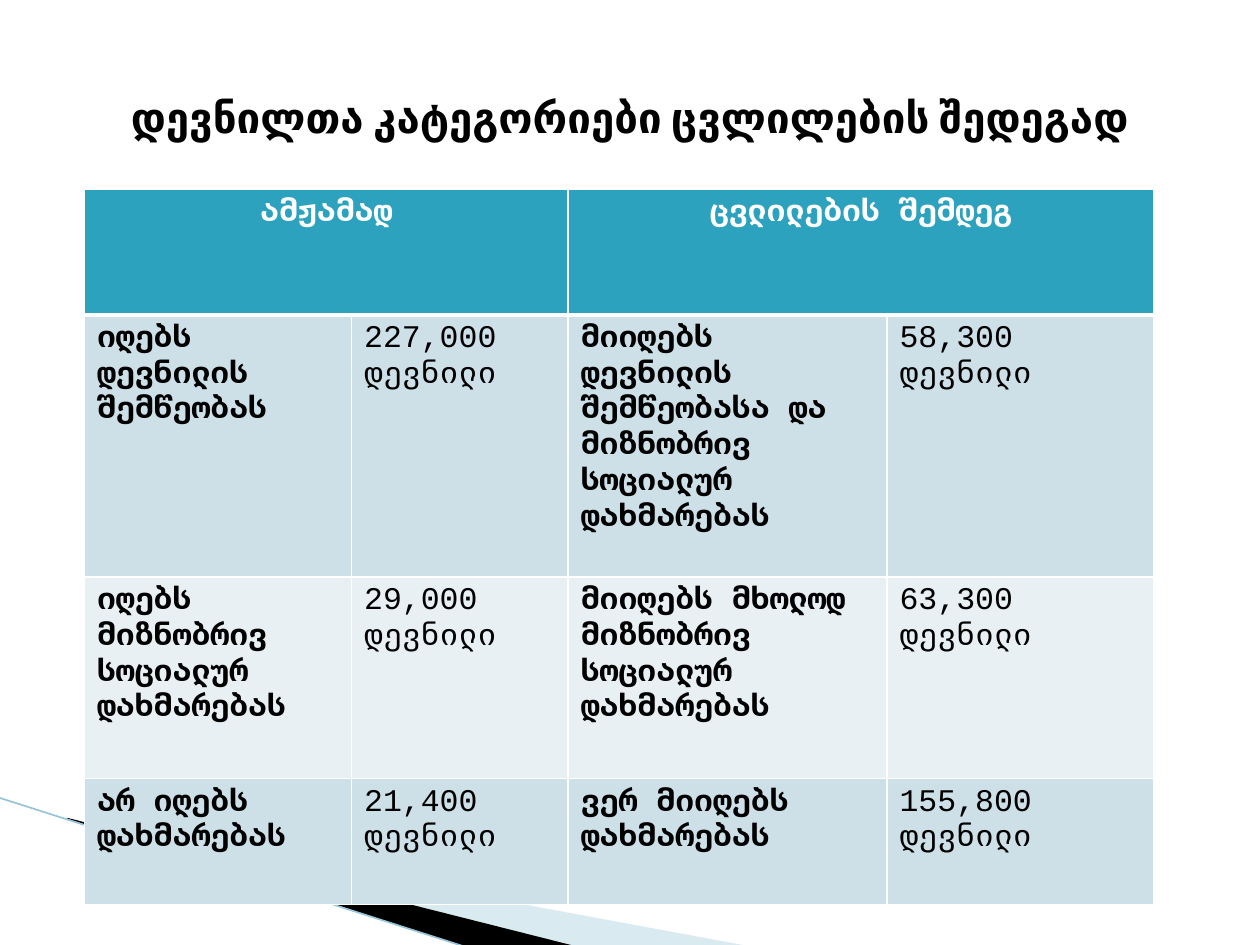
from dataclasses import dataclass

from lxml import etree
from pptx import Presentation
from pptx.dml.color import RGBColor
from pptx.enum.shapes import MSO_CONNECTOR
from pptx.enum.text import MSO_ANCHOR, PP_ALIGN
from pptx.oxml.ns import qn
from pptx.util import Inches, Pt

CENTER, LEFT = PP_ALIGN.CENTER, PP_ALIGN.LEFT
MIDDLE = MSO_ANCHOR.MIDDLE
STRAIGHT = MSO_CONNECTOR.STRAIGHT


@dataclass(frozen=True)
class Theme:
    title_font: str = "Calibri"
    table_font: str = "Courier New"
    title_size: int = 24
    table_size: int = 18
    ink: str = "000000"
    white: str = "FFFFFF"
    header: str = "2DA2BF"
    bands: tuple = ("CDE0E8", "E8F0F4")
    pale_wedge: str = "A0CBDC"
    edge: str = "97C5D8"


THEME = Theme()

COLUMN_WIDTHS = (2.12, 1.72, 2.53, 2.12)
ROW_HEIGHTS = (1, 2.08, 1.6, 1)
HEADERS = ("ამჟამად", "ცვლილების შემდეგ")
UNIT = "დევნილი"
CATEGORIES = (
    ("იღებს დევნილის შემწეობას", "227,000",
     "მიიღებს დევნილის შემწეობასა და მიზნობრივ სოციალურ დახმარებას", "58,300"),
    ("იღებს მიზნობრივ სოციალურ დახმარებას", "29,000",
     "მიიღებს მხოლოდ მიზნობრივ სოციალურ დახმარებას", "63,300"),
    ("არ იღებს დახმარებას", "21,400",
     "ვერ მიიღებს დახმარებას", "155,800"),
)


def write(frame, lines, align, color, **font_format):
    for index, line in enumerate(lines):
        paragraph = frame.paragraphs[0] if index == 0 else frame.add_paragraph()
        paragraph.alignment = align
        run = paragraph.add_run()
        run.text = line
        for name, value in font_format.items():
            setattr(run.font, name, value)
        run.font.color.rgb = RGBColor.from_string(color)


def add_wedge(slide, points, color, opacity=None):
    corners = [(Inches(x), Inches(y)) for x, y in points]
    builder = slide.shapes.build_freeform(*corners[0])
    builder.add_line_segments(corners[1:])
    wedge = builder.convert_to_shape()
    wedge.shadow.inherit = False
    wedge.line.fill.background()
    wedge.fill.solid()
    wedge.fill.fore_color.rgb = RGBColor.from_string(color)
    if opacity is not None:
        fill_color = wedge.fill._xPr.find(".//" + qn("a:srgbClr"))
        etree.SubElement(fill_color, qn("a:alpha"), val=str(opacity * 1000))


def add_edge(slide, start, end):
    ends = [Inches(value) for value in (*start, *end)]
    edge = slide.shapes.add_connector(STRAIGHT, *ends)
    edge.line.width = Pt(0.95)
    edge.line.color.rgb = RGBColor.from_string(THEME.edge)
    etree.SubElement(edge._element.spPr, qn("a:effectLst"))


def add_title(slide, text):
    title = slide.shapes.add_textbox(Inches(0.5), Inches(0.3), Inches(9), Inches(1.25))
    frame = title.text_frame
    frame.word_wrap = True
    frame.vertical_anchor = MIDDLE
    write(frame, [text], CENTER, THEME.ink,
          name=THEME.title_font, size=Pt(THEME.title_size), bold=True)


def style_cell(cell, fill, bottom=1, top=1):
    properties = cell._tc.get_or_add_tcPr()
    for side, points in (("L", 1), ("R", 1), ("T", top), ("B", bottom)):
        border = etree.SubElement(properties, qn(f"a:ln{side}"), w=str(Pt(points)))
        line_fill = etree.SubElement(border, qn("a:solidFill"))
        etree.SubElement(line_fill, qn("a:srgbClr"), val=THEME.white)
    cell.fill.solid()
    cell.fill.fore_color.rgb = RGBColor.from_string(fill)


def add_categories_table(slide):
    table = slide.shapes.add_table(
        len(ROW_HEIGHTS), len(COLUMN_WIDTHS), Inches(0.67), Inches(1.5),
        Inches(sum(COLUMN_WIDTHS)), Inches(sum(ROW_HEIGHTS))).table
    for column, width in zip(table.columns, COLUMN_WIDTHS):
        column.width = Inches(width)
    for row, height in zip(table.rows, ROW_HEIGHTS):
        row.height = Inches(height)
    text_format = {"name": THEME.table_font, "size": Pt(THEME.table_size)}

    # Header row: each heading covers a category and its count
    for index, heading in enumerate(HEADERS):
        first, second = table.cell(0, 2 * index), table.cell(0, 2 * index + 1)
        first.merge(second)
        for cell in (first, second):
            style_cell(cell, THEME.header, bottom=3)
        write(first.text_frame, [heading], CENTER, THEME.white, bold=True, **text_format)

    # Body rows: bold categories, plain counts
    for row, values in enumerate(CATEGORIES, start=1):
        for column, value in enumerate(values):
            is_count = column % 2 == 1
            cell = table.cell(row, column)
            style_cell(cell, THEME.bands[(row - 1) % 2], top=3 if row == 1 else 1)
            write(cell.text_frame, [value, UNIT] if is_count else [value],
                  LEFT, THEME.ink, bold=not is_count, **text_format)


def main():
    deck = Presentation()
    deck.slide_width, deck.slide_height = Inches(10), Inches(7.5)
    slide = deck.slides.add_slide(deck.slide_layouts[6])

    # Corner decoration
    add_wedge(slide, [(0.55, 6.51), (5.95, 7.51), (4.56, 7.51), (0.55, 6.5)],
              THEME.pale_wedge, opacity=40)
    add_wedge(slide, [(0.53, 6.49), (4.57, 7.51), (3.72, 7.52), (0.54, 6.5)], THEME.ink)
    add_edge(slide, (-0.01, 6.33), (3.71, 7.52))

    # Content
    add_categories_table(slide)
    add_title(slide, "დევნილთა კატეგორიები ცვლილების შედეგად")

    deck.save("out.pptx")


if __name__ == "__main__":
    main()
